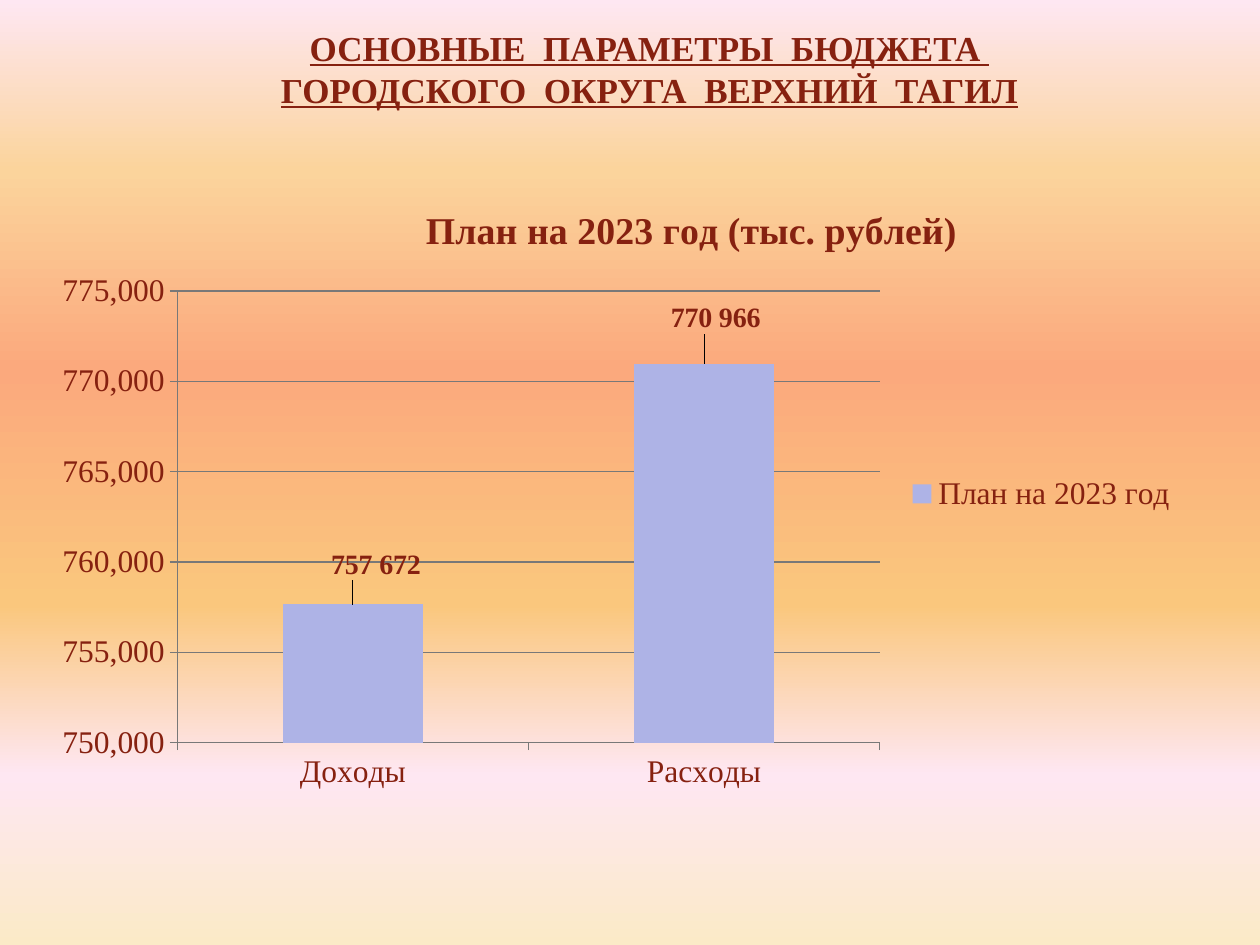
from lxml import etree
from pptx import Presentation
from pptx.chart.data import CategoryChartData
from pptx.dml.color import RGBColor
from pptx.enum.chart import XL_CHART_TYPE, XL_LABEL_POSITION, XL_LEGEND_POSITION, XL_TICK_MARK
from pptx.enum.text import MSO_AUTO_SIZE, PP_ALIGN
from pptx.oxml.ns import qn
from pptx.util import Inches, Pt

COLUMNS = XL_CHART_TYPE.COLUMN_CLUSTERED
ABOVE_BAR = XL_LABEL_POSITION.OUTSIDE_END
RIGHT = XL_LEGEND_POSITION.RIGHT
OUTSIDE = XL_TICK_MARK.OUTSIDE
CENTER = PP_ALIGN.CENTER
GROW = MSO_AUTO_SIZE.SHAPE_TO_FIT_TEXT

HEADING = [
    "ОСНОВНЫЕ  ПАРАМЕТРЫ  БЮДЖЕТА ",
    "ГОРОДСКОГО  ОКРУГА  ВЕРХНИЙ  ТАГИЛ",
]
CHART_TITLE = "План на 2023 год (тыс. рублей)"
SERIES = "План на 2023 год"
BUDGET = [
    ("Доходы", 757672, "757 672", {"x": 0.02, "y": -0.03}),
    ("Расходы", 770966, "770 966", {"x": 0.01, "y": -0.04}),
]
PLOT_AREA = {"layoutTarget": "inner", "xMode": "edge", "yMode": "edge",
             "x": 0.12, "y": 0.17, "w": 0.61, "h": 0.735}
TITLE_PLACE = {"xMode": "edge", "yMode": "edge", "x": 0.33, "y": 0.02}

THEME = {
    "font": "Times New Roman",
    "ink": RGBColor.from_string("862110"),
    "bar": RGBColor.from_string("AEB3E6"),
    "line": RGBColor.from_string("787878"),
    "heading": Pt(20),
    "title": Pt(21.6),
    "body": Pt(18),
    "value": Pt(16),
    "sky": [(0, "FBEAC7"), (18, "FEE7F2"), (36, "FAC77D"),
            (61, "FBA97D"), (82, "FBD49C"), (100, "FEE7F2")],
}


def style(font, size, bold=False):
    font.name = THEME["font"]
    font.size = THEME[size]
    font.bold = bold
    font.color.rgb = THEME["ink"]


def place(element, index, settings):
    for old in element.findall(qn("c:layout")):
        element.remove(old)
    layout = etree.Element(qn("c:layout"))
    manual = etree.SubElement(layout, qn("c:manualLayout"))
    for name, value in settings.items():
        etree.SubElement(manual, qn(f"c:{name}")).set("val", str(value))
    element.insert(index, layout)


def paint_background(slide):
    fill = slide.background.fill
    fill.gradient()
    fill.gradient_angle = 90
    stops = slide.background._cSld.find(".//" + qn("a:gsLst"))
    for old in list(stops):
        stops.remove(old)
    for percent, color in THEME["sky"]:
        stop = etree.SubElement(stops, qn("a:gs"), pos=str(percent * 1000))
        etree.SubElement(stop, qn("a:srgbClr"), val=color)


def add_heading(slide):
    box = slide.shapes.add_textbox(Inches(0.7), Inches(0.16), Inches(8.91), Inches(0.77))
    frame = box.text_frame
    frame.word_wrap = True
    frame.auto_size = GROW
    frame.text = "\n".join(HEADING)
    for paragraph in frame.paragraphs:
        paragraph.alignment = CENTER
        for run in paragraph.runs:
            style(run.font, "heading", True)
            run.font.underline = True


def add_budget_chart(slide):
    data = CategoryChartData(number_format="#,##0")
    data.categories = [category for category, *_ in BUDGET]
    data.add_series(SERIES, [amount for _, amount, *_ in BUDGET])
    chart = slide.shapes.add_chart(
        COLUMNS, Inches(0.31), Inches(1.48), Inches(9.14), Inches(4.88), data).chart
    style(chart.font, "body")

    chart.has_title = True
    title = chart.chart_title
    title.text_frame.text = CHART_TITLE
    style(title.text_frame.paragraphs[0].runs[0].font, "title", True)
    place(title._element, 1, TITLE_PLACE)

    chart.has_legend = True
    chart.legend.position = RIGHT
    chart.legend.include_in_layout = False
    style(chart.legend.font, "body")

    amounts = chart.value_axis
    amounts.minimum_scale, amounts.maximum_scale = 750000, 775000
    amounts.major_unit = 5000
    amounts.has_major_gridlines = True
    amounts.tick_labels.number_format = "#,##0"
    amounts.tick_labels.number_format_is_linked = False
    for axis in (amounts, chart.category_axis):
        axis.major_tick_mark = OUTSIDE
        style(axis.tick_labels.font, "body")
    for part in (amounts, chart.category_axis, amounts.major_gridlines):
        part.format.line.color.rgb = THEME["line"]
        part.format.line.width = Pt(0.75)

    plot = chart.plots[0]
    plot.gap_width = 150
    plot.vary_by_categories = False
    bars = plot.series[0]
    bars.format.fill.solid()
    bars.format.fill.fore_color.rgb = THEME["bar"]
    labels = bars.data_labels
    labels.show_value = True
    labels.number_format = "#,##0"
    labels.number_format_is_linked = False
    labels.position = ABOVE_BAR
    style(labels.font, "value", True)
    for index, (_, _, caption, _) in enumerate(BUDGET):
        label = bars.points[index].data_label
        label.text_frame.text = caption
        style(label.text_frame.paragraphs[0].runs[0].font, "value", True)
        label.position = ABOVE_BAR

    space = chart._chartSpace
    place(space.find(".//" + qn("c:plotArea")), 0, PLOT_AREA)
    for element, (*_, offset) in zip(space.findall(".//" + qn("c:dLbl")), BUDGET):
        place(element, 1, offset)


def main():
    deck = Presentation()
    deck.slide_width, deck.slide_height = Inches(10), Inches(7.5)
    slide = deck.slides.add_slide(deck.slide_layouts[6])
    paint_background(slide)
    add_heading(slide)
    add_budget_chart(slide)
    deck.save("out.pptx")


if __name__ == "__main__":
    main()
